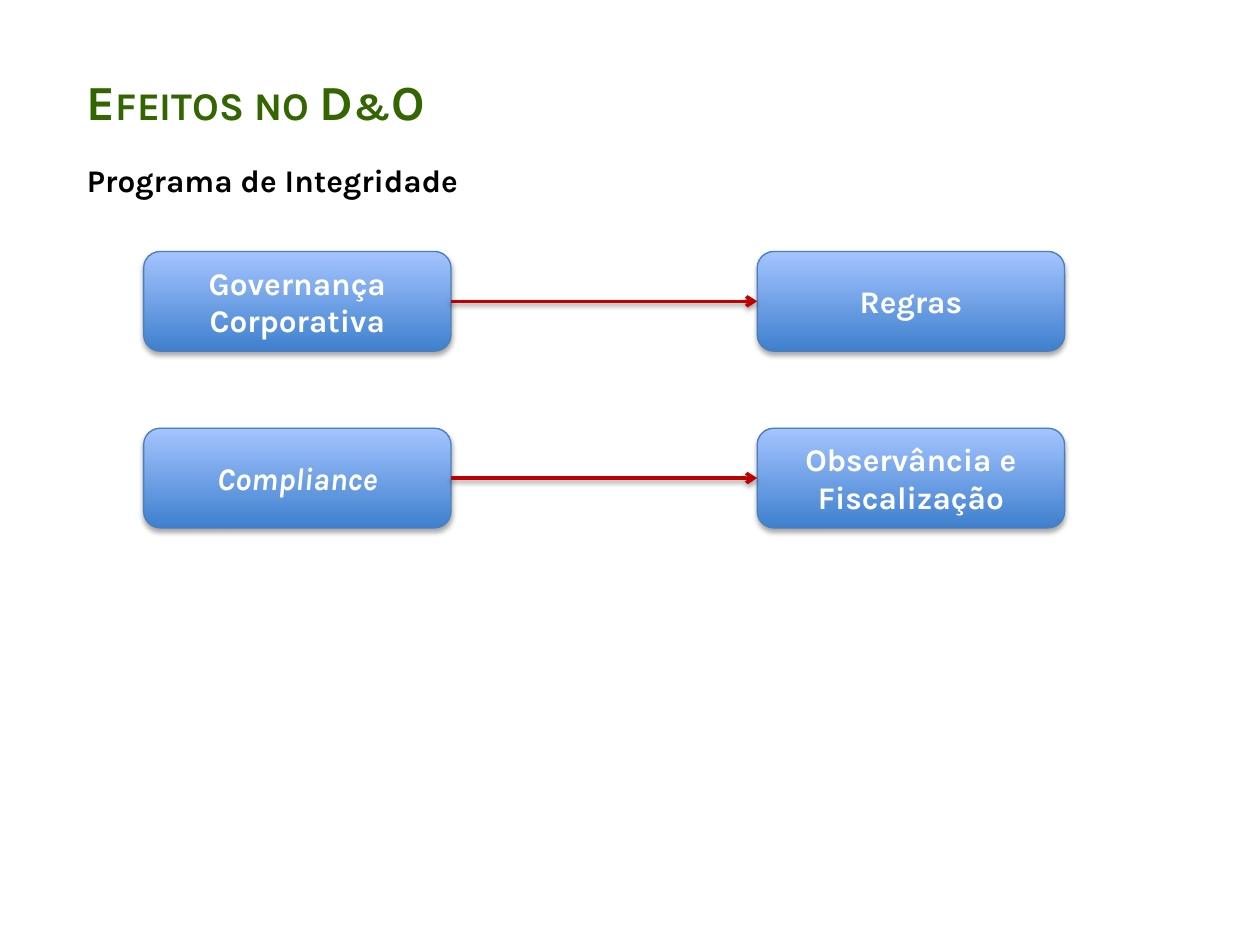
from lxml import etree
from pptx import Presentation
from pptx.dml.color import RGBColor
from pptx.enum.shapes import MSO_CONNECTOR, MSO_SHAPE
from pptx.enum.text import MSO_ANCHOR, MSO_AUTO_SIZE, PP_ALIGN
from pptx.oxml.ns import qn
from pptx.util import Pt

ROUNDED = MSO_SHAPE.ROUNDED_RECTANGLE
STRAIGHT = MSO_CONNECTOR.STRAIGHT
TOP, MIDDLE = MSO_ANCHOR.TOP, MSO_ANCHOR.MIDDLE
LEFT, CENTER = PP_ALIGN.LEFT, PP_ALIGN.CENTER
NO_FIT = MSO_AUTO_SIZE.NONE
LEFT_SITE, RIGHT_SITE = 1, 3


def color(value):
    return RGBColor.from_string(value)


class Page:
    font = "Karla"
    green, black, white = "336600", "000000", "FFFFFF"
    gradient = ("3F80CE", "A4C4FF")
    outline, arrow_red = "4B7EBC", "C00000"

    def __init__(self, deck):
        self.slide = deck.slides.add_slide(deck.slide_layouts[1])

    def label(self, shape, text, size, hue, align, anchor, italic=None):
        frame = shape.text_frame
        frame.word_wrap = True
        frame.auto_size = NO_FIT
        frame.vertical_anchor = anchor
        frame.text = text
        para = frame.paragraphs[0]
        para.alignment = align
        para.space_before = Pt(0)
        span = para.runs[0]
        span.font.name = self.font
        span.font.size = Pt(size)
        span.font.bold = True
        span.font.italic = italic
        span.font.color.rgb = color(hue)
        return para

    def heading(self, index, text, top, height, size, hue):
        holder = self.slide.placeholders[index]
        holder.left, holder.top = Pt(42.5), Pt(top)
        holder.width, holder.height = Pt(641), Pt(height)
        return self.label(holder, text, size, hue, LEFT, TOP)

    def title(self, text):
        para = self.heading(0, text, 37.5, 41, 28, self.green)
        para.runs[0]._r.get_or_add_rPr().set("cap", "small")

    def subtitle(self, text):
        para = self.heading(1, text, 88.5, 73, 18, self.black)
        properties = para._p.get_or_add_pPr()
        properties.set("marL", "0")
        properties.set("indent", "0")
        etree.SubElement(properties, qn("a:buNone"))

    def shadow(self, shape, distance, opacity):
        shape_properties = shape._element.spPr
        effects = shape_properties.find(qn("a:effectLst"))
        if effects is None:
            effects = etree.SubElement(shape_properties, qn("a:effectLst"))
        outer = etree.SubElement(
            effects, qn("a:outerShdw"), blurRad=str(Pt(3.1)),
            dist=str(Pt(distance)), dir="5400000", rotWithShape="0")
        tone = etree.SubElement(outer, qn("a:srgbClr"), val=self.black)
        etree.SubElement(tone, qn("a:alpha"), val=str(opacity * 1000))

    def box(self, text, left, top, italic=None):
        box = self.slide.shapes.add_shape(
            ROUNDED, Pt(left), Pt(top), Pt(175.7), Pt(57))
        box.shadow.inherit = False
        box.fill.gradient()
        box.fill.gradient_angle = 90
        for stop, hue in zip(box.fill.gradient_stops, self.gradient):
            stop.color.rgb = color(hue)
        box.line.color.rgb = color(self.outline)
        box.line.width = Pt(0.75)
        self.shadow(box, 1.8, 35)
        self.label(box, text, 18, self.white, CENTER, MIDDLE, italic)
        return box

    def arrow(self, start, end):
        arrow = self.slide.shapes.add_connector(STRAIGHT, 0, 0, 0, 0)
        arrow.begin_connect(start, RIGHT_SITE)
        arrow.end_connect(end, LEFT_SITE)
        arrow.line.color.rgb = color(self.arrow_red)
        arrow.line.width = Pt(2)
        line = arrow._element.spPr.find(qn("a:ln"))
        etree.SubElement(line, qn("a:tailEnd"), type="arrow")
        self.shadow(arrow, 1.6, 38)


def main():
    deck = Presentation()
    deck.slide_width, deck.slide_height = Pt(720), Pt(540)
    page = Page(deck)

    # Headings
    page.title("Efeitos no D&O")
    page.subtitle("Programa de Integridade")

    # Each concept points to its effect
    rows = [
        ("Governança Corporativa", "Regras", None),
        ("Compliance", "Observância e Fiscalização", True),
    ]
    for index, (concept, effect, italic) in enumerate(rows):
        top = 143.7 + index * 101
        start = page.box(concept, 82.1, top, italic)
        end = page.box(effect, 432.7, top)
        page.arrow(start, end)

    deck.save("out.pptx")


if __name__ == "__main__":
    main()
